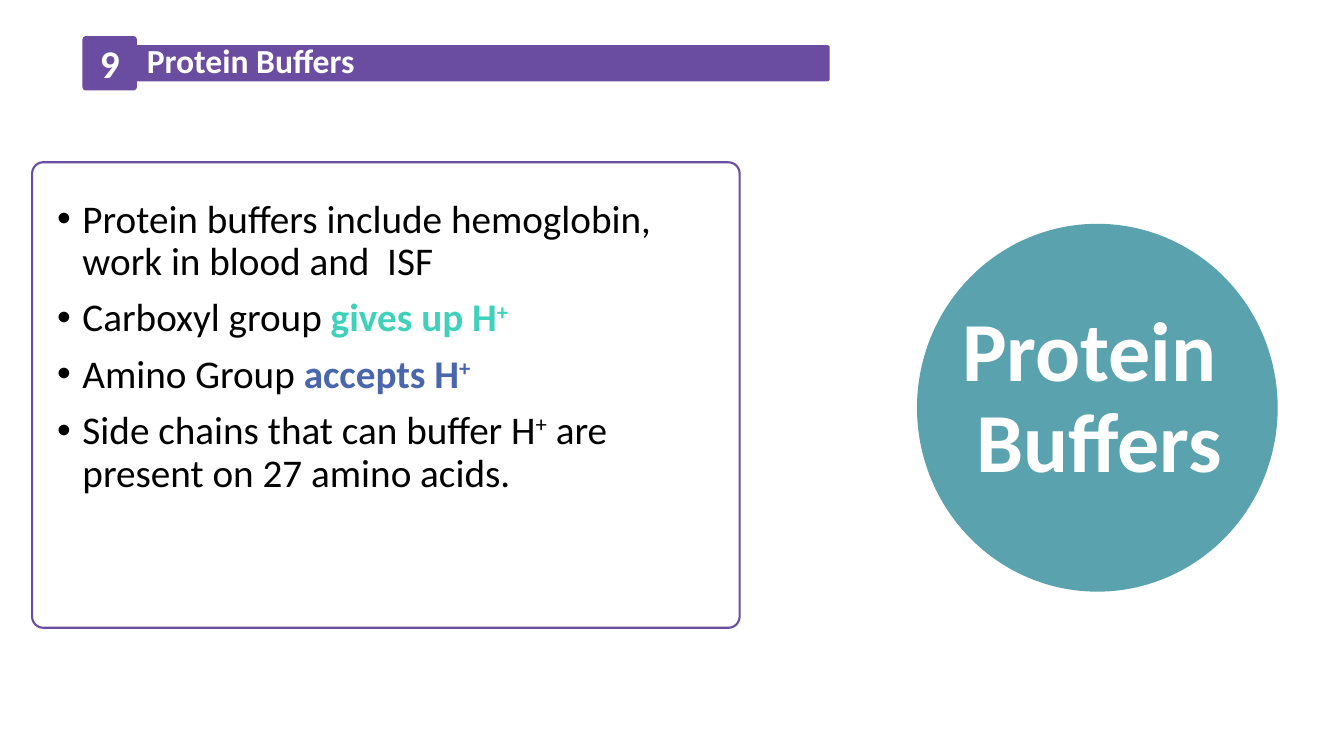
from lxml.etree import SubElement
from pptx import Presentation
from pptx.dml.color import RGBColor
from pptx.enum.shapes import MSO_SHAPE
from pptx.enum.text import MSO_ANCHOR, PP_ALIGN
from pptx.oxml.ns import qn
from pptx.util import Cm, Pt

PURPLE = RGBColor(0x6A, 0x4C, 0xA1)
TEAL = RGBColor(0x5A, 0xA2, 0xAE)
MINT = RGBColor(0x3F, 0xD1, 0xBA)
BLUE = RGBColor(0x4A, 0x66, 0xAC)
WHITE = RGBColor(0xFF, 0xFF, 0xFF)
BLACK = RGBColor(0x00, 0x00, 0x00)

# Each bullet is a list of runs: text, colour, bold, superscript.
BULLETS = [
    [("Protein buffers include hemoglobin, work in blood and  ISF", BLACK, False, False)],
    [("Carboxyl group ", BLACK, False, False),
     ("gives up H", MINT, True, False), ("+", MINT, True, True)],
    [("Amino Group ", BLACK, False, False),
     ("accepts H", BLUE, True, False), ("+", BLUE, True, True)],
    [("Side chains that can buffer H", BLACK, False, False), ("+", BLACK, False, True),
     (" are present on 27 amino acids.", BLACK, False, False)],
]


class SlideBuilder:
    font_name = "Calibri"

    def __init__(self, presentation):
        self.slide = presentation.slides.add_slide(presentation.slide_layouts[5])

    def add_run(self, paragraph, text, size, color=WHITE, bold=True, superscript=False):
        run = paragraph.add_run()
        run.text = text
        run.font.name = self.font_name
        run.font.size = Pt(size)
        run.font.bold = bold
        run.font.color.rgb = color
        if superscript:
            run.font._element.set("baseline", "30000")

    def shape(self, kind, left, top, width, height, fill, line=None, corner=None):
        shape = self.slide.shapes.add_shape(kind, Cm(left), Cm(top), Cm(width), Cm(height))
        shape.shadow.inherit = False
        shape.fill.solid()
        shape.fill.fore_color.rgb = fill
        if line is None:
            shape.line.fill.background()
        else:
            shape.line.color.rgb = line
            shape.line.width = Pt(1.5)
        if corner is not None:
            shape.adjustments[0] = corner
        return shape

    def badge(self, text, left, top, side):
        shape = self.shape(MSO_SHAPE.ROUNDED_RECTANGLE, left, top, side, side,
                           PURPLE, corner=0.06)
        shape.text_frame.vertical_anchor = MSO_ANCHOR.MIDDLE
        paragraph = shape.text_frame.paragraphs[0]
        paragraph.alignment = PP_ALIGN.CENTER
        self.add_run(paragraph, text, 28)

    def text_frame(self, left, top, width, height):
        box = self.slide.shapes.add_textbox(Cm(left), Cm(top), Cm(width), Cm(height))
        box.text_frame.word_wrap = True
        return box.text_frame

    def heading(self, text, left, top, width, height):
        paragraph = self.text_frame(left, top, width, height).paragraphs[0]
        paragraph.line_spacing = Pt(15.2)
        self.add_run(paragraph, text, 24)

    def bullet_list(self, bullets, left, top, width, height):
        frame = self.text_frame(left, top, width, height)
        for index, runs in enumerate(bullets):
            paragraph = frame.add_paragraph() if index else frame.paragraphs[0]
            paragraph.line_spacing = 0.9
            if index:
                paragraph.space_before = Pt(10)
            properties = paragraph._p.get_or_add_pPr()
            properties.set("marL", str(Cm(0.64)))
            properties.set("indent", str(-Cm(0.64)))
            SubElement(properties, qn("a:buFont"), typeface="Arial")
            SubElement(properties, qn("a:buChar"), char="•")
            for text, color, bold, superscript in runs:
                self.add_run(paragraph, text, 28, color, bold, superscript)

    def title(self, lines, left, top, width, height):
        """Places the title placeholder in front of the shapes drawn so far."""
        title = self.slide.shapes.title
        title.left, title.top = Cm(left), Cm(top)
        title.width, title.height = Cm(width), Cm(height)
        self.slide.shapes.element.append(title.element)
        frame = title.text_frame
        frame.word_wrap = True
        frame.vertical_anchor = MSO_ANCHOR.MIDDLE
        paragraph = frame.paragraphs[0]
        paragraph.alignment = PP_ALIGN.CENTER
        paragraph.line_spacing = 0.9
        for index, line in enumerate(lines):
            if index:
                paragraph.add_line_break()
            self.add_run(paragraph, line, 60)


def main():
    presentation = Presentation()
    presentation.slide_width, presentation.slide_height = Cm(33.87), Cm(19.05)
    builder = SlideBuilder(presentation)
    builder.shape(MSO_SHAPE.ROUNDED_RECTANGLE, 0.81, 4.09, 17.83, 11.73,
                  WHITE, line=PURPLE, corner=0.024)
    builder.bullet_list(BULLETS, 1.19, 4.9, 17, 10.34)
    builder.shape(MSO_SHAPE.ROUNDED_RECTANGLE, 2.77, 1.14, 18.14, 0.91, PURPLE, corner=0.06)
    builder.badge("9", 2.08, 0.91, 1.37)
    builder.heading("Protein Buffers", 3.45, 1.35, 15.16, 0.89)
    builder.shape(MSO_SHAPE.OVAL, 23.11, 5.64, 9.09, 9.27, TEAL)
    builder.title(["Protein", " Buffers"], 22.17, 8.23, 10.57, 3.68)
    presentation.save("out.pptx")


if __name__ == "__main__":
    main()
